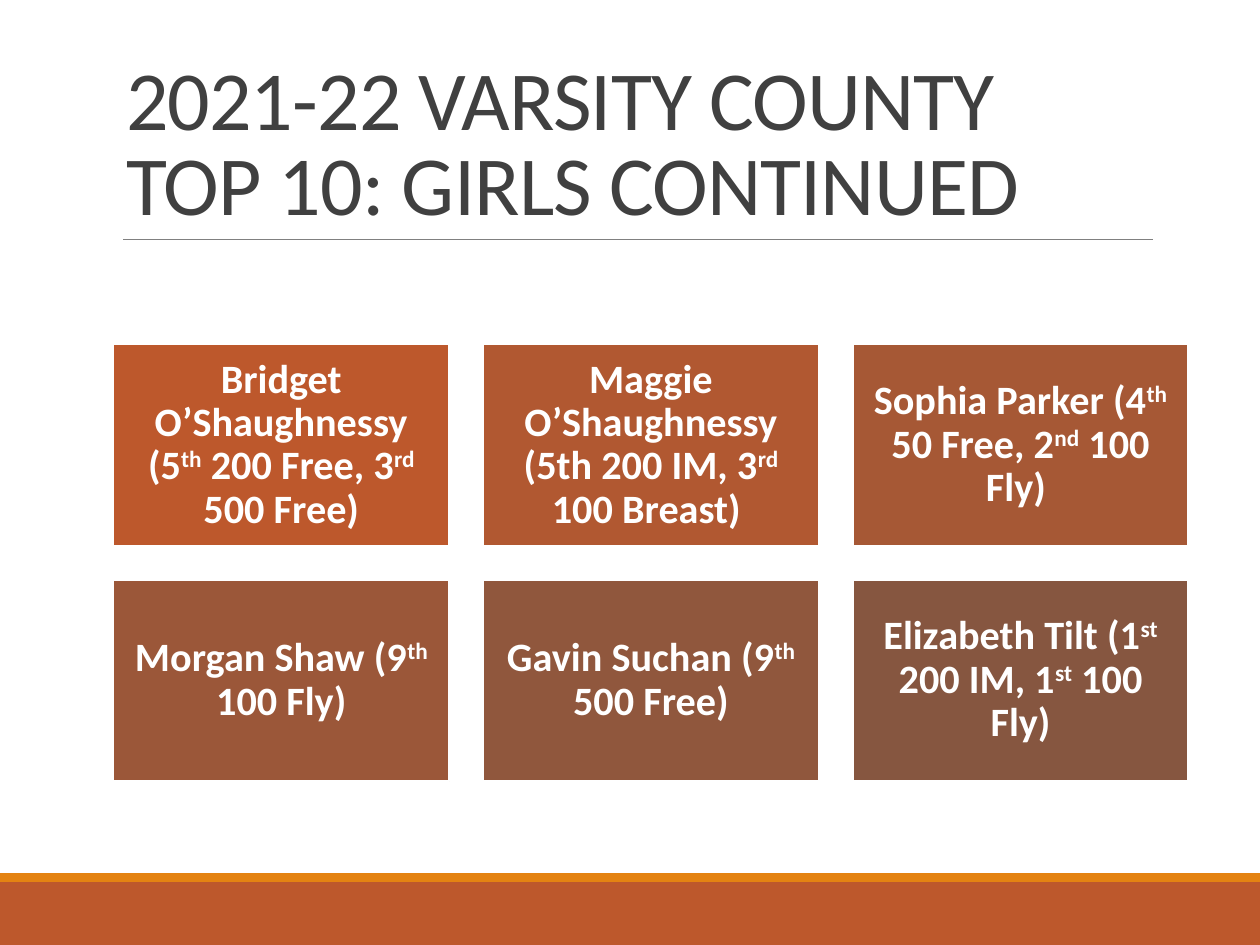
from dataclasses import dataclass

from lxml.etree import SubElement
from pptx import Presentation
from pptx.dml.color import RGBColor
from pptx.enum.shapes import MSO_CONNECTOR as Link, MSO_SHAPE as Kind
from pptx.enum.text import MSO_ANCHOR as Anchor, MSO_AUTO_SIZE as Fit, PP_ALIGN as Align
from pptx.oxml.ns import qn
from pptx.util import Pt

COLORS = {
    "rust": "BD582C", "amber": "E48312", "rule": "808080",
    "ink": "404040", "white": "FFFFFF",
}
LEFT, TOP = 64.8, 196.8
WIDTH, HEIGHT, GAP = 192, 115.2, 19.2
COLS = 3
FRAME = {"word_wrap": True, "auto_size": Fit.NONE}
INSETS = {f"margin_{side}": Pt(7.2) for side in ("left", "top", "right", "bottom")}
TITLE = {"name": "Calibri", "size": Pt(48), "bold": False}
LABEL = {"name": "Calibri", "size": Pt(23), "bold": True}


@dataclass
class Card:
    text: str  # carets enclose superscripts
    fill: str


CARDS = [
    Card("Bridget O’Shaughnessy (5^th^ 200 Free, 3^rd^ 500 Free)", "BD582C"),
    Card("Maggie O’Shaughnessy (5th 200 IM, 3^rd^ 100 Breast) ", "B15831"),
    Card("Sophia Parker (4^th^ 50 Free, 2^nd^ 100 Fly) ", "A65835"),
    Card("Morgan Shaw (9^th^ 100 Fly)", "9B5739"),
    Card("Gavin Suchan (9^th^ 500 Free)", "90573D"),
    Card("Elizabeth Tilt (1^st^ 200 IM, 1^st^ 100 Fly)", "865640"),
]


def apply(item, values: dict) -> None:
    for key, value in values.items():
        setattr(item, key, value)


def style(font, values: dict, color: str) -> None:
    apply(font, values)
    font.color.rgb = RGBColor.from_string(color)


def add_rect(slide, x: float, y: float, w: float, h: float, fill: str):
    box = slide.shapes.add_shape(Kind.RECTANGLE, Pt(x), Pt(y), Pt(w), Pt(h))
    box.shadow.inherit = False
    box.fill.solid()
    box.fill.fore_color.rgb = RGBColor.from_string(fill)
    box.line.fill.background()
    return box


def add_rule(slide, x: float, y: float, end: float) -> None:
    rule = slide.shapes.add_connector(Link.STRAIGHT, Pt(x), Pt(y), Pt(end), Pt(y))
    rule.line.width = Pt(0.5)
    rule.line.color.rgb = RGBColor.from_string(COLORS["rule"])
    SubElement(rule._element.spPr, qn("a:effectLst"))


def set_title(slide, text: str) -> None:
    title = slide.shapes.title
    apply(title, {"left": Pt(LEFT), "top": Pt(22.5), "width": Pt(594), "height": Pt(114.3)})
    frame = title.text_frame
    apply(frame, FRAME | {"vertical_anchor": Anchor.BOTTOM})
    frame.text = text
    para = frame.paragraphs[0]
    apply(para, {"alignment": Align.LEFT, "line_spacing": 0.85, "space_before": Pt(0)})
    for run in para.runs:
        style(run.font, TITLE, COLORS["ink"])
        run.font._element.set("spc", "-50")


def add_card(slide, card: Card, index: int) -> None:
    row, col = divmod(index, COLS)
    x, y = LEFT + col * (WIDTH + GAP), TOP + row * (HEIGHT + GAP)
    box = add_rect(slide, x, y, WIDTH, HEIGHT, card.fill)
    box.line.width = Pt(1.25)
    box.line.color.rgb = RGBColor.from_string(COLORS["white"])
    frame = box.text_frame
    apply(frame, FRAME | INSETS | {"vertical_anchor": Anchor.MIDDLE})
    para = frame.paragraphs[0]
    apply(para, {"alignment": Align.CENTER, "line_spacing": 0.9})
    for order, part in enumerate(card.text.split("^")):
        run = para.add_run()
        run.text = part
        style(run.font, LABEL, COLORS["white"])
        if order % 2:
            run.font._element.set("baseline", "30000")


def main() -> None:
    deck = Presentation()
    apply(deck, {"slide_width": Pt(720), "slide_height": Pt(540)})
    slide = deck.slides.add_slide(deck.slide_layouts[5])
    add_rect(slide, 0, 504, 720, 36, COLORS["rust"])
    add_rect(slide, 0, 499, 720, 5, COLORS["amber"])
    add_rule(slide, 70.5, 136.8, 658.8)
    set_title(slide, "2021-22 VARSITY COUNTY \vTOP 10: GIRLS CONTINUED")
    for index, card in enumerate(CARDS):
        add_card(slide, card, index)
    deck.save("out.pptx")


if __name__ == "__main__":
    main()
